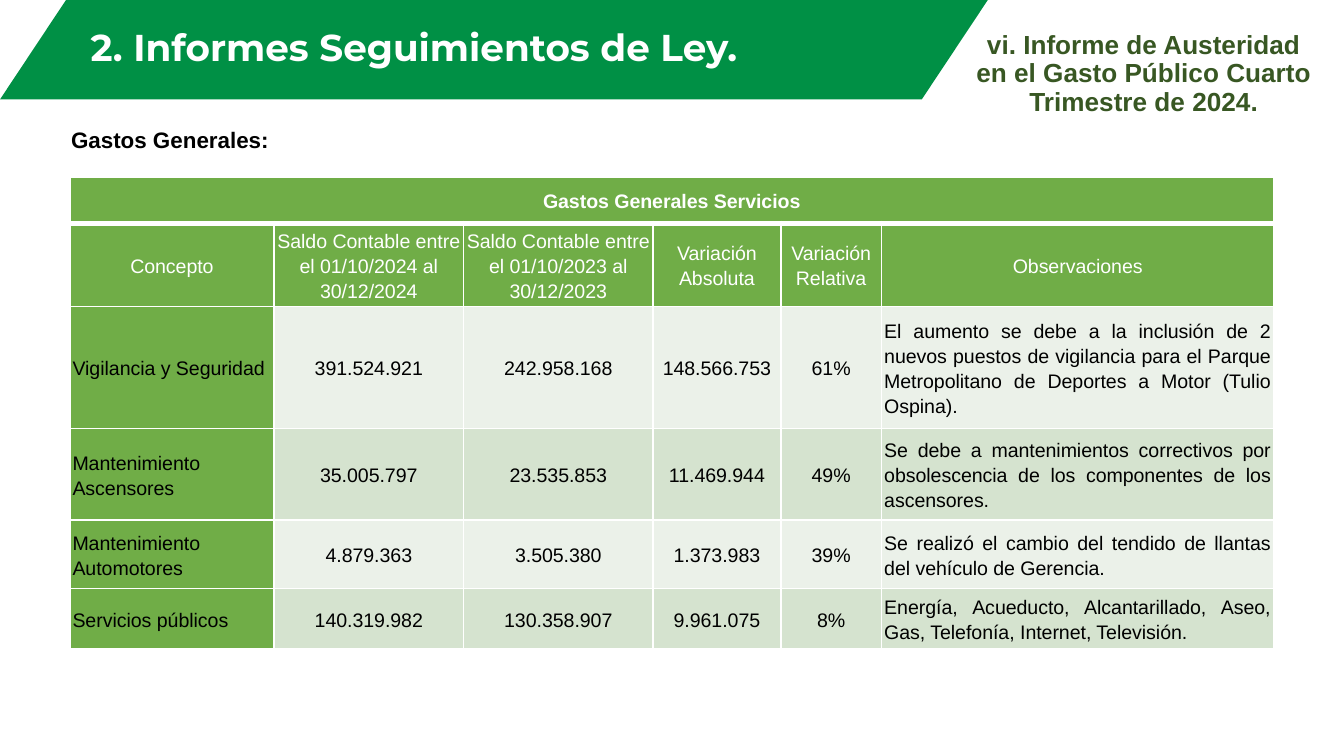
from lxml import etree
from pptx import Presentation
from pptx.dml.color import RGBColor
from pptx.enum.shapes import MSO_SHAPE
from pptx.enum.text import MSO_ANCHOR, PP_ALIGN
from pptx.oxml.ns import qn
from pptx.util import Inches, Pt

GREEN, TABLE_GREEN = "009045", "70AD47"
BANDS = ["EBF1E9", "D5E3CF"]
WHITE, BLACK, DARK_GREEN = "FFFFFF", "000000", "385723"

COLUMN_WIDTHS = [1.52, 1.41, 1.41, 0.95, 0.75, 2.92]
ROW_HEIGHTS = [0.34, 0.62, 0.91, 0.68, 0.51, 0.45]
TABLE_TITLE = "Gastos Generales Servicios"
HEADINGS = [
    "Concepto",
    "Saldo Contable entre el 01/10/2024 al 30/12/2024",
    "Saldo Contable entre el 01/10/2023 al 30/12/2023",
    "Variación Absoluta",
    "Variación Relativa",
    "Observaciones",
]
EXPENSES = [
    ["Vigilancia y Seguridad", "391.524.921", "242.958.168", "148.566.753", "61%",
     "El aumento se debe a la inclusión de 2 nuevos puestos de vigilancia para el "
     "Parque Metropolitano de Deportes a Motor (Tulio Ospina)."],
    ["Mantenimiento Ascensores", "35.005.797", "23.535.853", "11.469.944", "49%",
     "Se debe a mantenimientos correctivos por obsolescencia de los componentes "
     "de los ascensores."],
    ["Mantenimiento Automotores", "4.879.363", "3.505.380", "1.373.983", "39%",
     "Se realizó el cambio del tendido de llantas del vehículo de Gerencia."],
    ["Servicios públicos", "140.319.982", "130.358.907", "9.961.075", "8%",
     "Energía, Acueducto, Alcantarillado, Aseo, Gas, Telefonía, Internet, Televisión."],
]


def color(value):
    return RGBColor.from_string(value)


def write(frame, text, size, ink, bold=False, font="Arial",
          align=PP_ALIGN.CENTER, spacing=1.0):
    para = frame.paragraphs[0]
    para.alignment = align
    para.line_spacing = spacing
    span = para.add_run()
    span.text = text
    span.font.name = font
    span.font.size = Pt(size)
    span.font.bold = bold
    span.font.color.rgb = color(ink)


def add_text(page, area, text, size, ink, anchor=MSO_ANCHOR.TOP, **style):
    box = page.shapes.add_textbox(*map(Inches, area))
    box.text_frame.word_wrap = True
    box.text_frame.vertical_anchor = anchor
    write(box.text_frame, text, size, ink, bold=True, **style)


def add_banner(page):
    banner = page.shapes.add_shape(
        MSO_SHAPE.PARALLELOGRAM, 0, 0, Inches(7.35), Inches(0.74))
    banner.adjustments[0] = 0.664
    banner.shadow.inherit = False
    banner.fill.solid()
    banner.fill.fore_color.rgb = color(GREEN)
    banner.line.fill.background()


def set_borders(cell, top=1, bottom=1):
    properties = cell._tc.get_or_add_tcPr()
    widths = {"a:lnL": 1, "a:lnR": 1, "a:lnT": top, "a:lnB": bottom}
    # Borders must come before the cell's fill
    for place, (tag, width) in enumerate(widths.items()):
        line = etree.Element(qn(tag), w=str(Pt(width)))
        fill = etree.SubElement(line, qn("a:solidFill"))
        etree.SubElement(fill, qn("a:srgbClr"), val=WHITE)
        properties.insert(place, line)


def fill_cell(cell, text, fill, ink, bold=False, align=PP_ALIGN.CENTER):
    cell.margin_left = cell.margin_right = Inches(0.02)
    cell.margin_top = cell.margin_bottom = 0
    cell.vertical_anchor = MSO_ANCHOR.MIDDLE
    cell.fill.solid()
    cell.fill.fore_color.rgb = color(fill)
    write(cell.text_frame, text, 10.5, ink, bold, align=align, spacing=1.15)


def add_expense_table(page):
    table = page.shapes.add_table(
        len(ROW_HEIGHTS), len(COLUMN_WIDTHS),
        Inches(0.52), Inches(1.32), Inches(8.96), Inches(3.51)).table
    for column, width in zip(table.columns, COLUMN_WIDTHS):
        column.width = Inches(width)
    for row, height in zip(table.rows, ROW_HEIGHTS):
        row.height = Inches(height)

    # Title row across all columns
    last = len(COLUMN_WIDTHS) - 1
    title = table.cell(0, 0)
    title.merge(table.cell(0, last))
    fill_cell(title, TABLE_TITLE, TABLE_GREEN, WHITE, bold=True)
    set_borders(title, bottom=3)

    # Column headings
    for c, heading in enumerate(HEADINGS):
        cell = table.cell(1, c)
        fill_cell(cell, heading, TABLE_GREEN, WHITE)
        set_borders(cell, top=3)

    # Banded expense rows with a solid first column
    for r, expense in enumerate(EXPENSES):
        for c, text in enumerate(expense):
            cell = table.cell(r + 2, c)
            fill = TABLE_GREEN if c == 0 else BANDS[r % 2]
            align = PP_ALIGN.JUSTIFY if c in (0, last) else PP_ALIGN.CENTER
            fill_cell(cell, text, fill, BLACK, align=align)
            set_borders(cell)


def main():
    # Widescreen page, 16 by 9
    deck = Presentation()
    deck.slide_width = Inches(10)
    deck.slide_height = deck.slide_width * 9 // 16
    page = deck.slides.add_slide(deck.slide_layouts[6])

    # Header
    add_banner(page)
    add_text(page, (0.18, 0.14, 5.88, 0.43), "2. Informes Seguimientos de Ley. ",
             20, WHITE, MSO_ANCHOR.BOTTOM, font="Montserrat", spacing=0.9)
    add_text(page, (7.12, 0.19, 2.78, 0.74),
             "vi. Informe de Austeridad en el Gasto Público Cuarto Trimestre de 2024.",
             14, DARK_GREEN, spacing=0.9)

    # Body
    add_text(page, (0.43, 0.89, 1.78, 0.3), "Gastos Generales:", 12, BLACK,
             align=PP_ALIGN.JUSTIFY)
    add_expense_table(page)
    deck.save("out.pptx")


if __name__ == "__main__":
    main()
